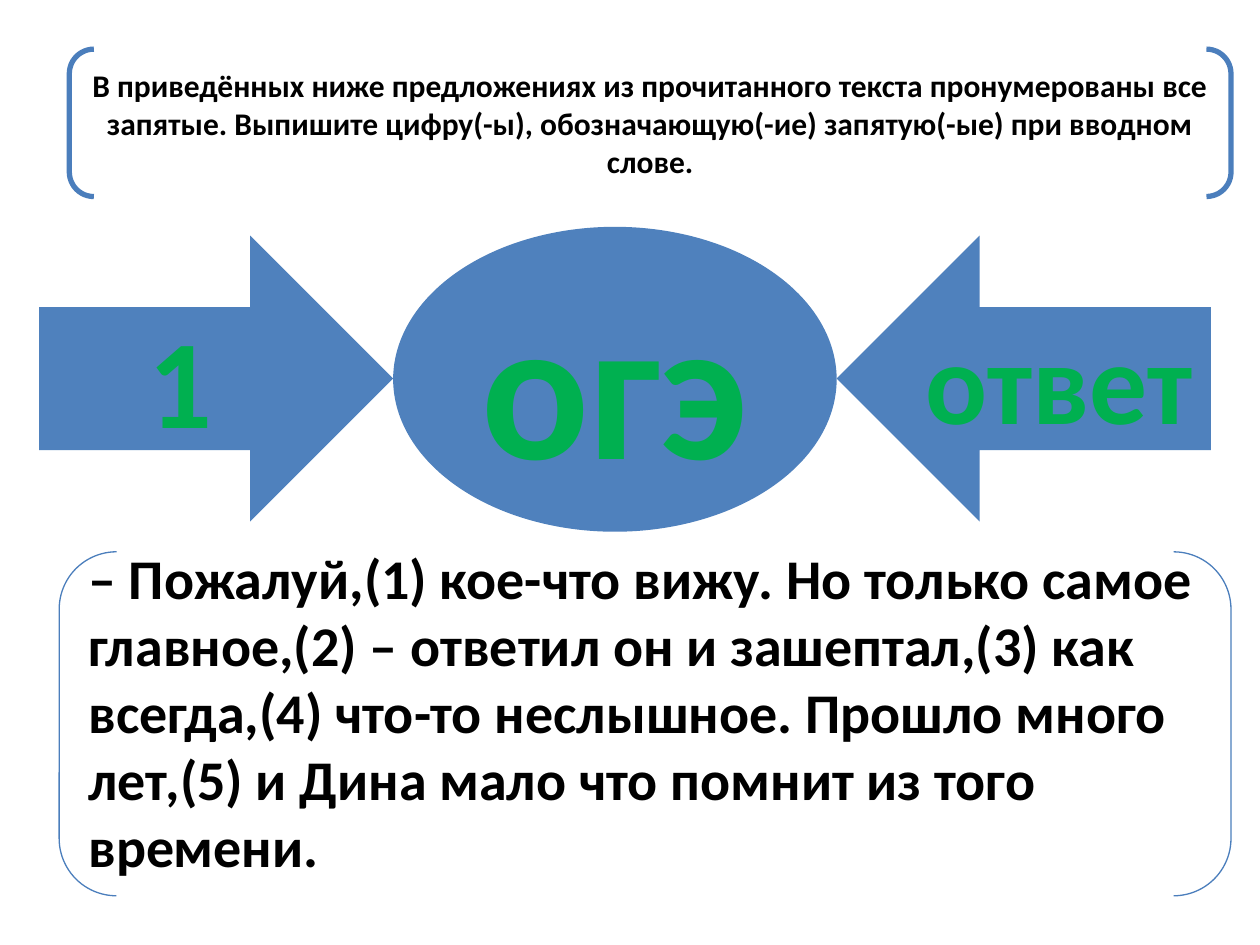
"""Build a Russian exam practice slide on commas around an introductory word."""
from dataclasses import dataclass

from pptx import Presentation
from pptx.dml.color import RGBColor as Color
from pptx.enum.shapes import MSO_SHAPE as Shape
from pptx.enum.text import MSO_ANCHOR as Anchor, PP_ALIGN as Align
from pptx.util import Inches, Pt


@dataclass(frozen=True)
class Theme:
    font: str = "Calibri"
    fill: Color = Color(0x4F, 0x81, 0xBD)
    outline: Color = Color(0x4B, 0x7E, 0xBC)
    ink: Color = Color(0, 0, 0)
    accent: Color = Color(0, 0xB0, 0x50)
    task_size: int = 18
    passage_size: int = 32
    answer_size: int = 66
    number_size: int = 72
    exam_size: int = 115


theme = Theme()
presentation = Presentation()
presentation.slide_width, presentation.slide_height = Inches(10), Inches(7.5)
slide = presentation.slides.add_slide(presentation.slide_layouts[6])


def add_block(kind, box, text, size, color, align=Align.CENTER):
    """Add a preset shape, placed in percent of the slide, with bold text."""
    left, top, width, height = box
    across, down = presentation.slide_width / 100, presentation.slide_height / 100
    shape = slide.shapes.add_shape(
        kind, int(left * across), int(top * down), int(width * across), int(height * down)
    )
    shape.shadow.inherit = False
    frame = shape.text_frame
    frame.word_wrap = True
    frame.vertical_anchor = Anchor.MIDDLE
    frame.text = text
    paragraph = frame.paragraphs[0]
    paragraph.alignment = align
    font = paragraph.runs[0].font
    font.name, font.size, font.bold = theme.font, Pt(size), True
    font.color.rgb = color
    return shape


task = add_block(
    Shape.DOUBLE_BRACKET, (5.5, 5.2, 92.2, 15.6),
    "В приведённых ниже предложениях из прочитанного текста пронумерованы все "
    "запятые. Выпишите цифру(-ы), обозначающую(-ие) запятую(-ые) при вводном слове.",
    theme.task_size, theme.ink,
)
passage = add_block(
    Shape.DOUBLE_BRACKET, (4.7, 58.4, 93, 36.4),
    "– Пожалуй,(1) кое-что вижу. Но только самое главное,(2) – ответил он и "
    "зашептал,(3) как всегда,(4) что-то неслышное. Прошло много лет,(5) и Дина "
    "мало что помнит из того времени.",
    theme.passage_size, theme.ink, Align.LEFT,
)
passage.text_frame.margin_bottom = Inches(0.25)

for bracket, line_width in ((task, 3), (passage, 0.75)):
    bracket.fill.background()
    bracket.line.color.rgb = theme.outline
    bracket.line.width = Pt(line_width)

arrow_top, arrow_height = 24.93, 30.27
arrow_left, oval_left, oval_right, arrow_right = 3.1, 31.2, 66.4, 96.1
banner = (
    (Shape.RIGHT_ARROW, (arrow_left, arrow_top, oval_left - arrow_left, arrow_height),
     "1", theme.number_size),
    (Shape.LEFT_ARROW, (oval_right, arrow_top, arrow_right - oval_right, arrow_height),
     "ответ", theme.answer_size),
    (Shape.OVAL, (oval_left, 24, oval_right - oval_left, 32.27),
     "огэ", theme.exam_size),
)
for kind, box, text, size in banner:
    shape = add_block(kind, box, text, size, theme.accent)
    shape.fill.solid()
    shape.fill.fore_color.rgb = theme.fill
    shape.line.fill.background()

presentation.save("out.pptx")
